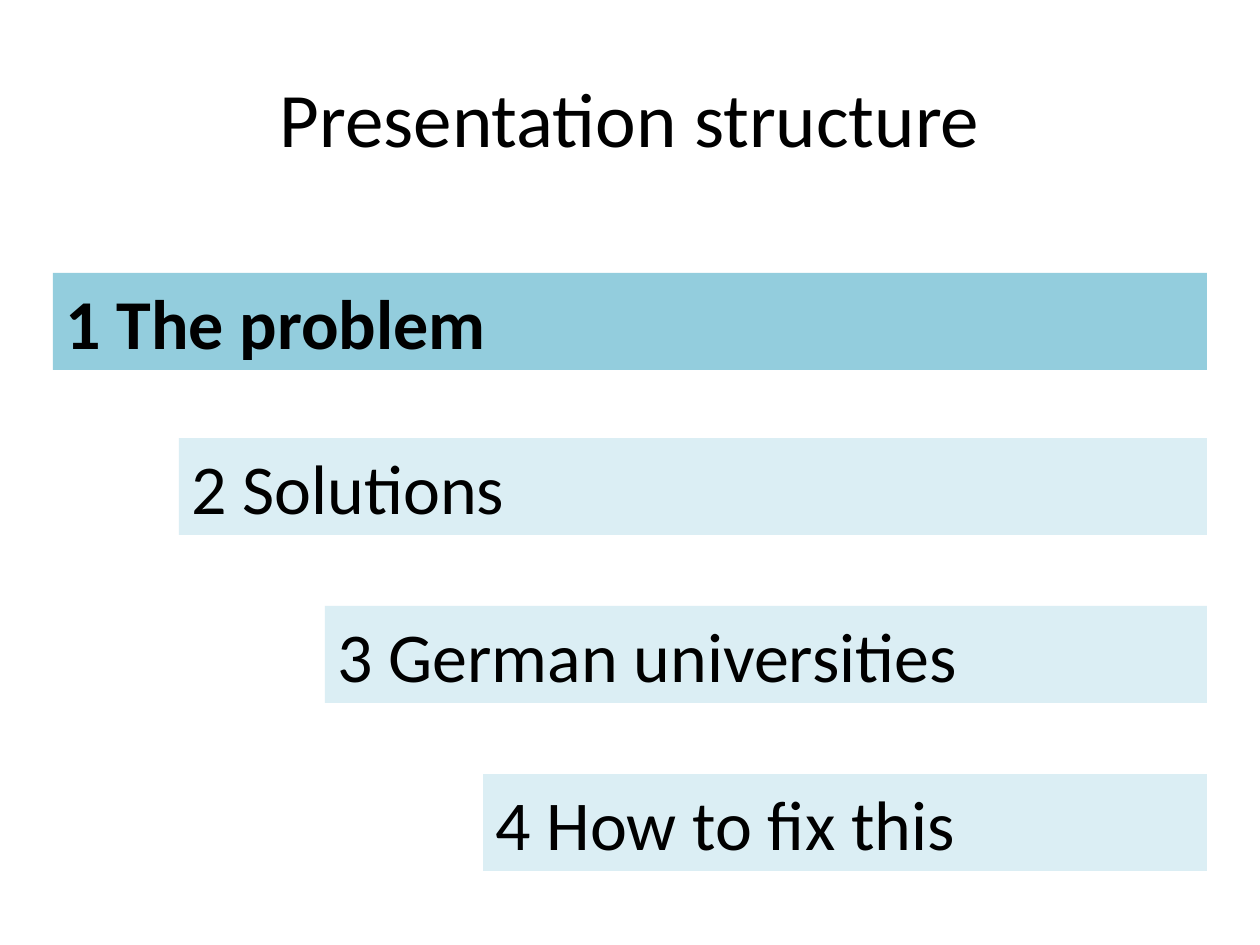
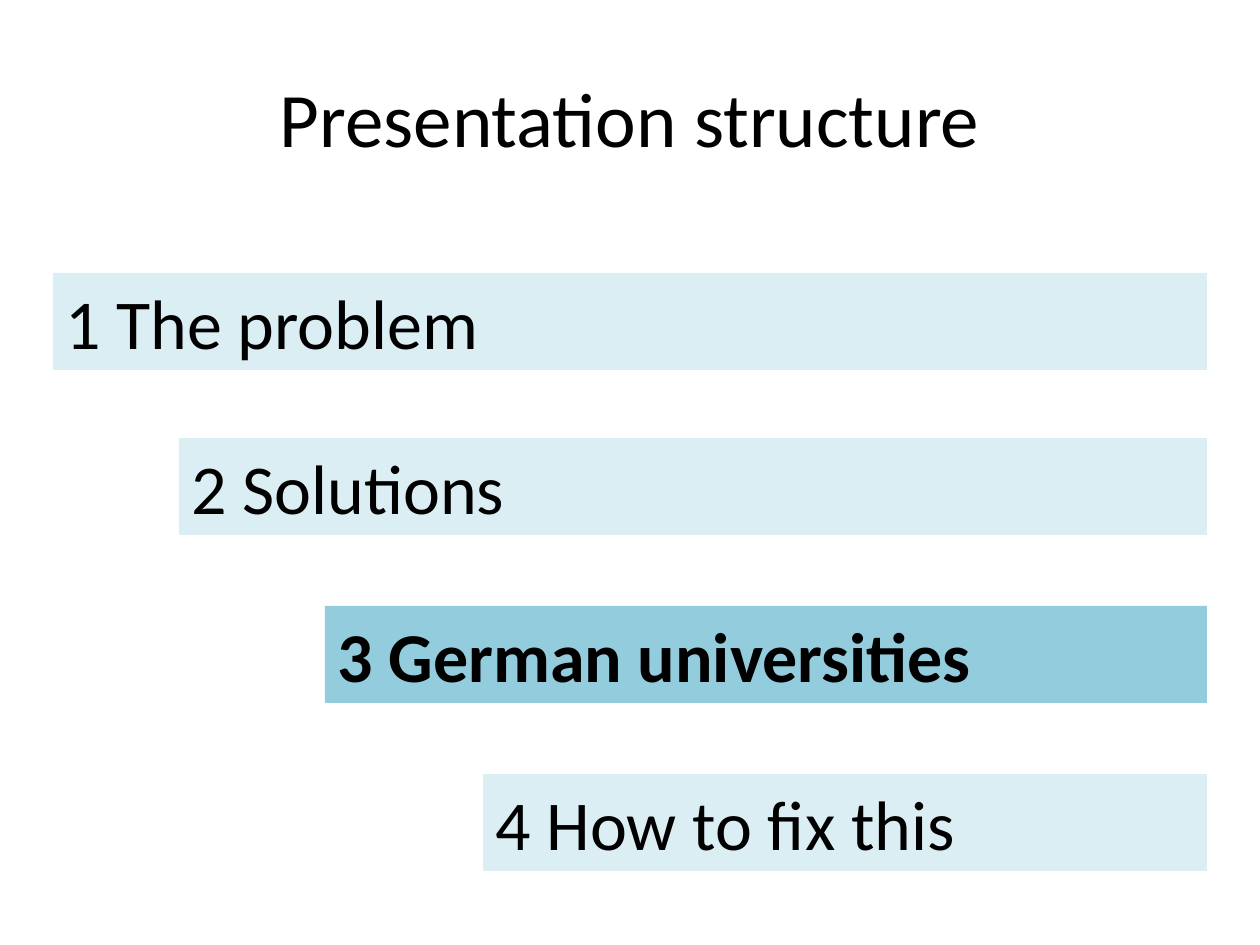
from pptx import Presentation
from pptx.dml.color import RGBColor
from pptx.enum.shapes import MSO_SHAPE
from pptx.enum.text import MSO_ANCHOR, MSO_AUTO_SIZE, PP_ALIGN
from pptx.util import Pt

TITLE = "Presentation structure"
SECTIONS = [
    ("1 The problem", 53, 273),
    ("2 Solutions", 179, 438),
    ("3 German universities", 325, 606),
    ("4 How to fix this", 483, 774),
]
CURRENT_SECTIONS = [0, 2]

EMU_PER_PX = 914400 / 126
PAGE_WIDTH, PAGE_HEIGHT = 1260, 945
TITLE_AREA = (63, 38, 1134, 157)
BAR_RIGHT, BAR_HEIGHT = 1207, 97

BLACK = RGBColor(0x00, 0x00, 0x00)
ACTIVE_BLUE = RGBColor(0x93, 0xCD, 0xDD)
PALE_BLUE = RGBColor(0xDB, 0xEE, 0xF4)

RECTANGLE = MSO_SHAPE.RECTANGLE
LEFT, CENTER = PP_ALIGN.LEFT, PP_ALIGN.CENTER
TOP, MIDDLE = MSO_ANCHOR.TOP, MSO_ANCHOR.MIDDLE
FIXED, GROW = MSO_AUTO_SIZE.NONE, MSO_AUTO_SIZE.SHAPE_TO_FIT_TEXT

TITLE_FRAME = {"word_wrap": True, "vertical_anchor": MIDDLE, "auto_size": FIXED}
BAR_FRAME = {"word_wrap": True, "vertical_anchor": TOP, "auto_size": GROW}
TITLE_FONT = {"name": "Calibri", "size": Pt(44), "bold": False}
BAR_FONT = {"name": "Calibri", "size": Pt(40), "bold": False}


def px(length):
    return round(length * EMU_PER_PX)


def apply_format(target, values):
    for name, value in values.items():
        setattr(target, name, value)


def write_text(box, text, frame_format, font_format, alignment):
    frame = box.text_frame
    apply_format(frame, frame_format)
    para = frame.paragraphs[0]
    para.alignment = alignment
    span = para.add_run()
    span.text = text
    apply_format(span.font, font_format)
    span.font.color.rgb = BLACK


def add_title(page):
    box = page.shapes.add_textbox(*map(px, TITLE_AREA))
    write_text(box, TITLE, TITLE_FRAME, TITLE_FONT, CENTER)


def add_section_bar(page, text, left, top, is_current):
    area = (left, top, BAR_RIGHT - left, BAR_HEIGHT)
    bar = page.shapes.add_shape(RECTANGLE, *map(px, area))
    bar.shadow.inherit = False
    bar.fill.solid()
    bar.fill.fore_color.rgb = ACTIVE_BLUE if is_current else PALE_BLUE
    bar.line.fill.background()
    write_text(bar, text, BAR_FRAME, {**BAR_FONT, "bold": is_current}, LEFT)


def main():
    deck = Presentation()
    deck.slide_width, deck.slide_height = px(PAGE_WIDTH), px(PAGE_HEIGHT)
    blank = deck.slide_layouts[6]
    for current in CURRENT_SECTIONS:
        page = deck.slides.add_slide(blank)
        add_title(page)
        for index, (text, left, top) in enumerate(SECTIONS):
            add_section_bar(page, text, left, top, index == current)
    deck.save("out.pptx")


if __name__ == "__main__":
    main()
